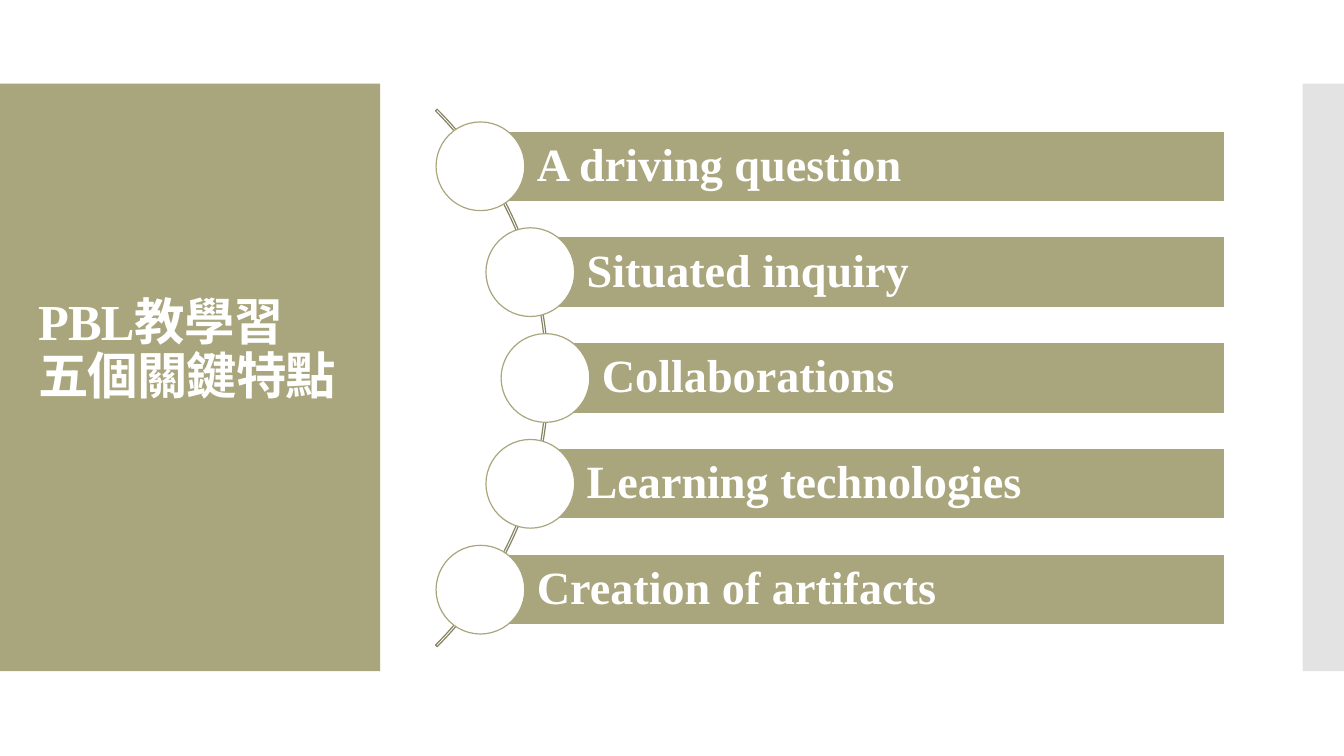
from math import sqrt

from lxml.etree import SubElement
from pptx import Presentation
from pptx.dml.color import RGBColor
from pptx.enum.shapes import MSO_SHAPE
from pptx.enum.text import MSO_ANCHOR, PP_ALIGN
from pptx.oxml.ns import qn
from pptx.util import Inches, Pt

COLORS = {"olive": "A9A57C", "arc": "878463", "edge": "C8C8C8", "white": "FFFFFF"}
FEATURES = [
    "A driving question",
    "Situated inquiry",
    "Collaborations",
    "Learning technologies",
    "Creation of artifacts",
]


def add_figure(slide, kind, box, fill=None, line=None):
    """Draw a flat preset shape in box, given as left, top, width, height in inches."""
    figure = slide.shapes.add_shape(kind, *map(Inches, box))
    figure.shadow.inherit = False
    if fill:
        figure.fill.solid()
        figure.fill.fore_color.rgb = RGBColor.from_string(COLORS[fill])
    else:
        figure.fill.background()
    if line:
        figure.line.color.rgb = RGBColor.from_string(COLORS[line])
        figure.line.width = Pt(0.85)
    else:
        figure.line.fill.background()
    return figure


def write_text(frame, text, size, left_inset):
    """Set bold white text, left aligned and centred vertically."""
    frame.word_wrap = True
    frame.vertical_anchor = MSO_ANCHOR.MIDDLE
    frame.margin_left = Inches(left_inset)
    frame.margin_right = Inches(0.09)
    paragraph = frame.paragraphs[0]
    paragraph.text = text
    paragraph.alignment = PP_ALIGN.LEFT
    paragraph.line_spacing = 0.9
    font = paragraph.font
    font.name = "Times New Roman"
    font.size = Pt(size)
    font.bold = True
    font.color.rgb = RGBColor.from_string(COLORS["white"])
    return paragraph


def add_title_panel(slide, left, top, width, height):
    """Place the olive panel and the slide title on it."""
    add_figure(slide, MSO_SHAPE.RECTANGLE, (left, top, width, height), "olive")
    title_box = (left + 0.28, top + 0.4, width - 0.55, height - 1.32)
    title = slide.shapes.add_textbox(*map(Inches, title_box))
    paragraph = write_text(title.text_frame, "PBL教學習\v五個關鍵特點", 36, 0.1)
    paragraph.font._rPr.set("spc", "-60")


def add_edge_strip(slide, left, top, width, height):
    """Place the half-transparent strip at the slide edge."""
    strip = add_figure(slide, MSO_SHAPE.RECTANGLE, (left, top, width, height), "edge")
    color = strip.fill._xPr.find(qn("a:solidFill"))[0]
    SubElement(color, qn("a:alpha")).set("val", "50000")


def add_feature_list(slide, left, top, width, height):
    """Place one bar and circle per feature along an arc bulging to the right."""
    radius, bar_height, diameter, pitch = 3.77, 0.7, 0.88, 1.05
    right, middle = left + width, top + height / 2
    center_x = left - 2.65
    arc_box = (center_x - radius, middle - radius, 2 * radius, 2 * radius)
    arc = add_figure(slide, MSO_SHAPE.BLOCK_ARC, arc_box, line="arc")
    for index, value in enumerate((189, 27, 0.003)):
        arc.adjustments[index] = value

    for index, feature in enumerate(FEATURES):
        offset = (index - (len(FEATURES) - 1) / 2) * pitch
        x = center_x + sqrt((radius - 0.03) ** 2 - offset ** 2)
        y = middle + offset
        bar_box = (x, y - bar_height / 2, right - x, bar_height)
        bar = add_figure(slide, MSO_SHAPE.RECTANGLE, bar_box, "olive", "white")
        write_text(bar.text_frame, feature, 33, 0.56)
        circle_box = (x - diameter / 2, y - diameter / 2, diameter, diameter)
        add_figure(slide, MSO_SHAPE.OVAL, circle_box, "white", "olive")


def main():
    """Build the slide and save it."""
    presentation = Presentation()
    presentation.slide_width = Inches(13.33)
    presentation.slide_height = Inches(7.5)
    slide = presentation.slides.add_slide(presentation.slide_layouts[6])
    add_title_panel(slide, 0, 0.83, 3.77, 5.83)
    add_edge_strip(slide, 12.92, 0.83, 0.41, 5.83)
    add_feature_list(slide, 4.32, 1.08, 7.83, 5.34)
    presentation.save("out.pptx")


if __name__ == "__main__":
    main()
